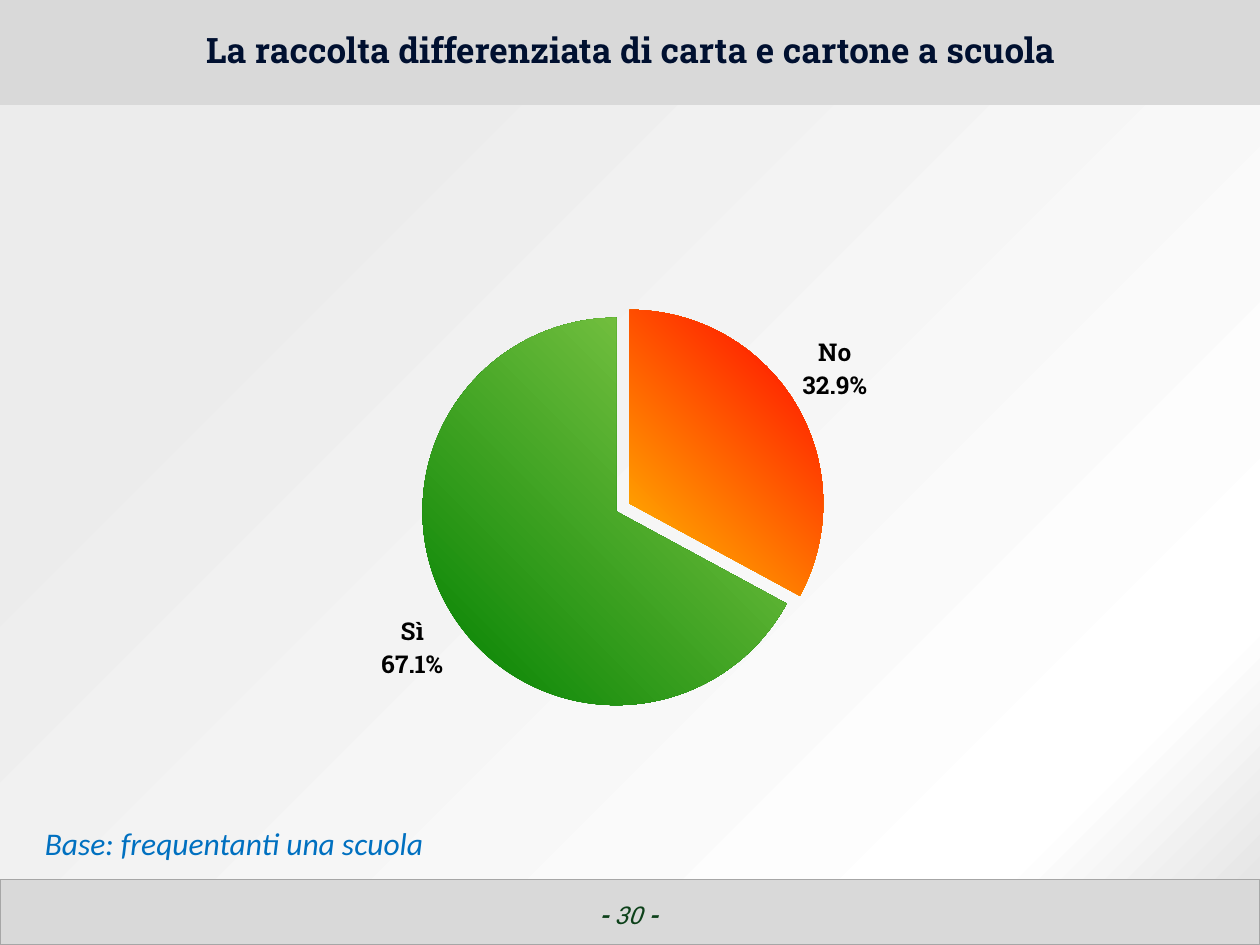
from lxml.etree import SubElement
from pptx import Presentation
from pptx.chart.data import CategoryChartData
from pptx.dml.color import RGBColor
from pptx.enum.chart import XL_CHART_TYPE as ChartType, XL_LABEL_POSITION as LabelPosition
from pptx.enum.shapes import MSO_SHAPE as Shape
from pptx.enum.text import MSO_ANCHOR as Anchor, MSO_AUTO_SIZE as AutoSize, PP_ALIGN as Align
from pptx.oxml import parse_xml
from pptx.oxml.ns import nsdecls, qn
from pptx.util import Pt

COLOURS = {
    "band": "D9D9D9", "band_line": "A6A6A6", "title": "001030", "page": "0D411A",
    "base": "0070C0", "label": "000000", "corner": "E6E6E6", "white": "FFFFFF",
    "grey": "ECECEC", "amber": "FFC000", "red": "FF0000", "green": "008000",
    "lime": "92D050",
}
SLAB = "Roboto Slab"
BODY = "Calibri"


def colour(name):
    return RGBColor.from_string(COLOURS[name])


def format_font(font, name, size, colour_name, bold=False, italic=False):
    font.name = name
    font.size = Pt(size)
    font.bold = bold
    font.italic = italic
    font.color.rgb = colour(colour_name)


def add_band(slide, top, height, line=None):
    band = slide.shapes.add_shape(Shape.RECTANGLE, 0, Pt(top), Pt(720), Pt(height))
    band.shadow.inherit = False
    band.fill.solid()
    band.fill.fore_color.rgb = colour("band")
    if line:
        band.line.color.rgb = colour(line)
        band.line.width = Pt(0.75)
    else:
        band.line.fill.background()
    return band


def set_corner_glow(shape, stops):
    stop_xml = "".join(
        f'<a:gs pos="{percent * 1000}"><a:srgbClr val="{COLOURS[name]}"/></a:gs>'
        for percent, name in stops
    )
    gradient = parse_xml(
        f'<a:gradFill {nsdecls("a")} rotWithShape="1"><a:gsLst>{stop_xml}</a:gsLst>'
        '<a:path path="circle"><a:fillToRect l="100000" t="100000"/></a:path></a:gradFill>'
    )
    properties = shape._element.spPr
    properties.replace(properties.find(qn("a:solidFill")), gradient)


def add_text(slide, left, top, width, height, pieces):
    box = slide.shapes.add_textbox(Pt(left), Pt(top), Pt(width), Pt(height))
    paragraph = box.text_frame.paragraphs[0]
    for text, style in pieces:
        run = paragraph.add_run()
        run.text = text
        format_font(run.font, **style)
    return box


def add_title(slide, text):
    title = slide.shapes.title
    slide.shapes._spTree.append(title._element)
    title.left, title.top, title.width, title.height = Pt(11.5), Pt(2), Pt(698), Pt(57)
    title.text_frame.text = text
    title.text_frame.vertical_anchor = Anchor.MIDDLE
    paragraph = title.text_frame.paragraphs[0]
    paragraph.alignment = Align.CENTER
    paragraph.line_spacing = Pt(20)
    format_font(paragraph.runs[0].font, SLAB, 20, "title", bold=True)


def set_plot_layout(chart, **place):
    plot_area = chart._chartSpace.chart.plotArea
    for old in plot_area.findall(qn("c:layout")):
        plot_area.remove(old)
    values = "".join(f'<c:{key} val="{value}"/>' for key, value in place.items())
    plot_area.insert(0, parse_xml(
        f'<c:layout {nsdecls("c")}><c:manualLayout><c:layoutTarget val="inner"/>'
        f'<c:xMode val="edge"/><c:yMode val="edge"/>{values}</c:manualLayout></c:layout>'
    ))


def add_pie(slide):
    data = CategoryChartData(number_format="0.0%")
    data.categories = ["No", "Sì"]
    data.add_series("Series 1", [0.329, 0.671])
    frame = slide.shapes.add_chart(ChartType.PIE, Pt(2), Pt(60), Pt(718), Pt(442), data)
    chart = frame.chart
    chart.has_title = False
    chart.has_legend = False
    format_font(chart.font, BODY, 10, "label")
    set_plot_layout(chart, x=0.233, y=0.26, w=0.52, h=0.521)

    plot = chart.plots[0]
    plot.vary_by_categories = True
    series = plot.series[0]
    for index, names in enumerate([("amber", "red"), ("green", "lime")]):
        fill = series.points[index].format.fill
        fill.gradient()
        fill.gradient_angle = 45
        for stop, name in zip(fill.gradient_stops, names):
            stop.color.rgb = colour(name)
    explosion = parse_xml(f'<c:explosion {nsdecls("c")} val="4"/>')
    series._element.find(qn("c:dPt")).addprevious(explosion)

    labels = series.data_labels
    labels.show_value = True
    labels.show_category_name = True
    labels.show_percentage = False
    labels.show_legend_key = False
    labels.number_format = "0.0%"
    labels.number_format_is_linked = False
    labels.position = LabelPosition.OUTSIDE_END
    format_font(labels.font, SLAB, 14, "label", bold=True)
    separator = SubElement(labels._element, qn("c:separator"))
    separator.text = "\n"
    labels._element.find(qn("c:showBubbleSize")).addnext(separator)


def main():
    presentation = Presentation()
    presentation.slide_width, presentation.slide_height = Pt(720), Pt(540)
    slide = presentation.slides.add_slide(presentation.slide_layouts[5])

    add_band(slide, 0, 60.5)
    add_band(slide, 502.5, 37.5, "band_line")
    backdrop = add_band(slide, 60, 442)
    set_corner_glow(backdrop, [(0, "corner"), (13, "white"), (82, "grey")])

    page = dict(name=SLAB, size=14, colour_name="page", italic=True)
    dash = dict(page, bold=True)
    number = add_text(slide, 275, 510.5, 168, 37.5,
                      [("- ", dash), ("30 ", page), ("-", dash)])
    number.text_frame.word_wrap = True
    number.text_frame.paragraphs[0].alignment = Align.CENTER

    add_title(slide, "La raccolta differenziata di carta e cartone a scuola")
    add_pie(slide)
    base = dict(name=BODY, size=18, colour_name="base", italic=True)
    note = add_text(slide, 18.5, 467.5, 234, 29, [("Base: frequentanti una scuola", base)])
    note.text_frame.word_wrap = False
    note.text_frame.auto_size = AutoSize.SHAPE_TO_FIT_TEXT

    presentation.save("out.pptx")


if __name__ == "__main__":
    main()
